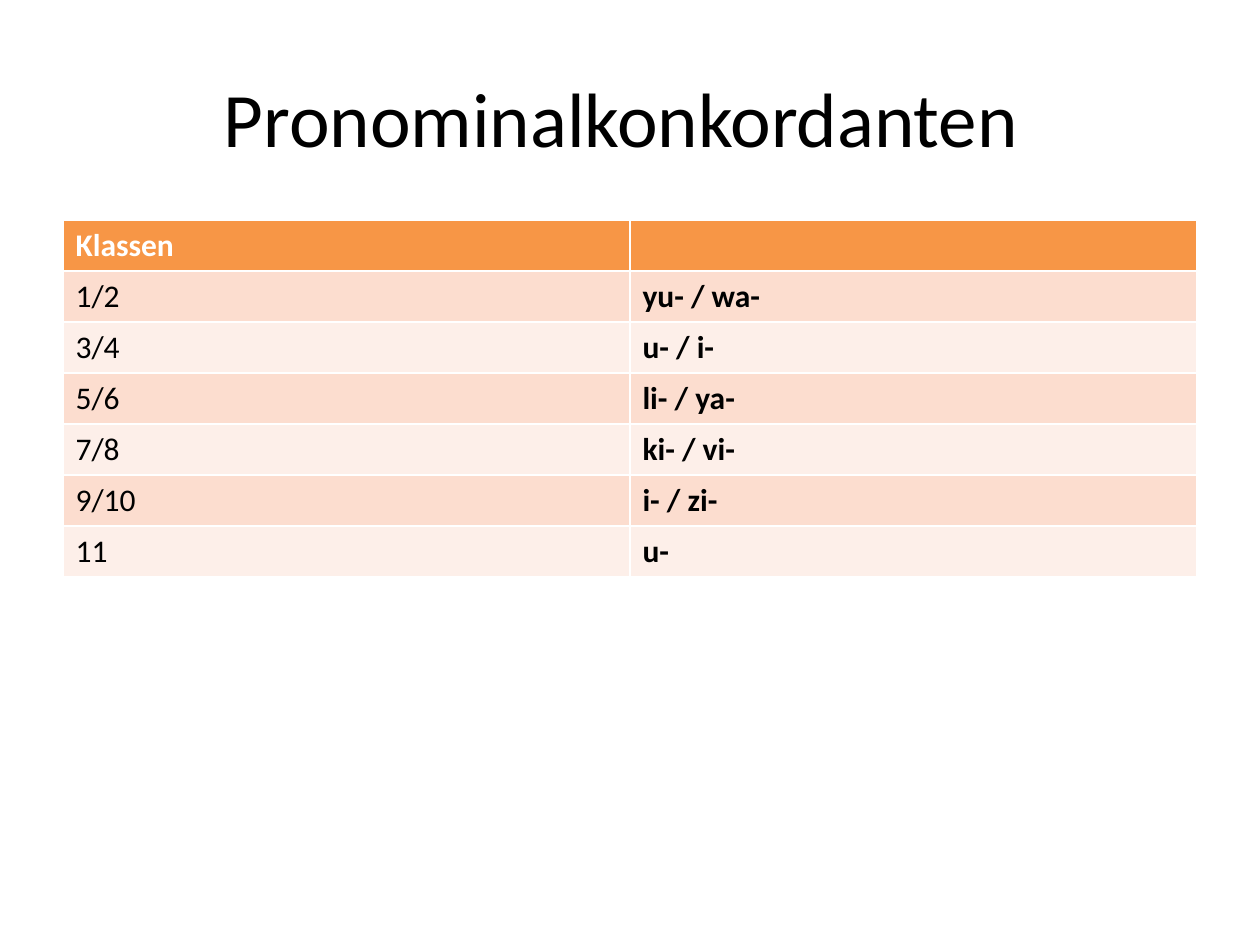
"""Build a slide with a table of pronominal concords by noun class."""
import pptx
import pptx.dml.color
import pptx.enum.text
import pptx.util

PX = 914400 // 126
ROW_HEIGHT = 51
COLUMN_WIDTH = 567
ROWS = [
    ("Klassen", ""),
    ("1/2", "yu- / wa-"),
    ("3/4", "u- / i-"),
    ("5/6", "li- / ya-"),
    ("7/8", "ki- / vi-"),
    ("9/10", "i- / zi-"),
    ("11", "u-"),
]


def color(value):
    return pptx.dml.color.RGBColor.from_string(value)


def style(para, size, ink, bold=False):
    para.font.name = "Calibri"
    para.font.size = pptx.util.Pt(size)
    para.font.bold = bold
    para.font.color.rgb = color(ink)


deck = pptx.Presentation()
deck.slide_width = 1260 * PX
deck.slide_height = 945 * PX
page = deck.slides.add_slide(deck.slide_layouts[6])

title = page.shapes.add_textbox(63 * PX, 38 * PX, 1134 * PX, 157 * PX)
title.text_frame.word_wrap = True
title.text_frame.vertical_anchor = pptx.enum.text.MSO_ANCHOR.MIDDLE
para = title.text_frame.paragraphs[0]
para.text = "Pronominalkonkordanten "
para.alignment = pptx.enum.text.PP_ALIGN.CENTER
style(para, 44, "000000")

table = page.shapes.add_table(
    len(ROWS), 2, 63 * PX, 220 * PX,
    2 * COLUMN_WIDTH * PX, len(ROWS) * ROW_HEIGHT * PX,
).table
for column in table.columns:
    column.width = COLUMN_WIDTH * PX

for row_index, texts in enumerate(ROWS):
    table.rows[row_index].height = ROW_HEIGHT * PX
    header = row_index == 0
    band = "FCDDCF" if row_index % 2 else "FDEFE9"
    for column_index, text in enumerate(texts):
        cell = table.cell(row_index, column_index)
        cell.fill.solid()
        cell.fill.fore_color.rgb = color("F79646" if header else band)
        para = cell.text_frame.paragraphs[0]
        para.text = text
        style(para, 18, "FFFFFF" if header else "000000", header or column_index == 1)

deck.save("out.pptx")
